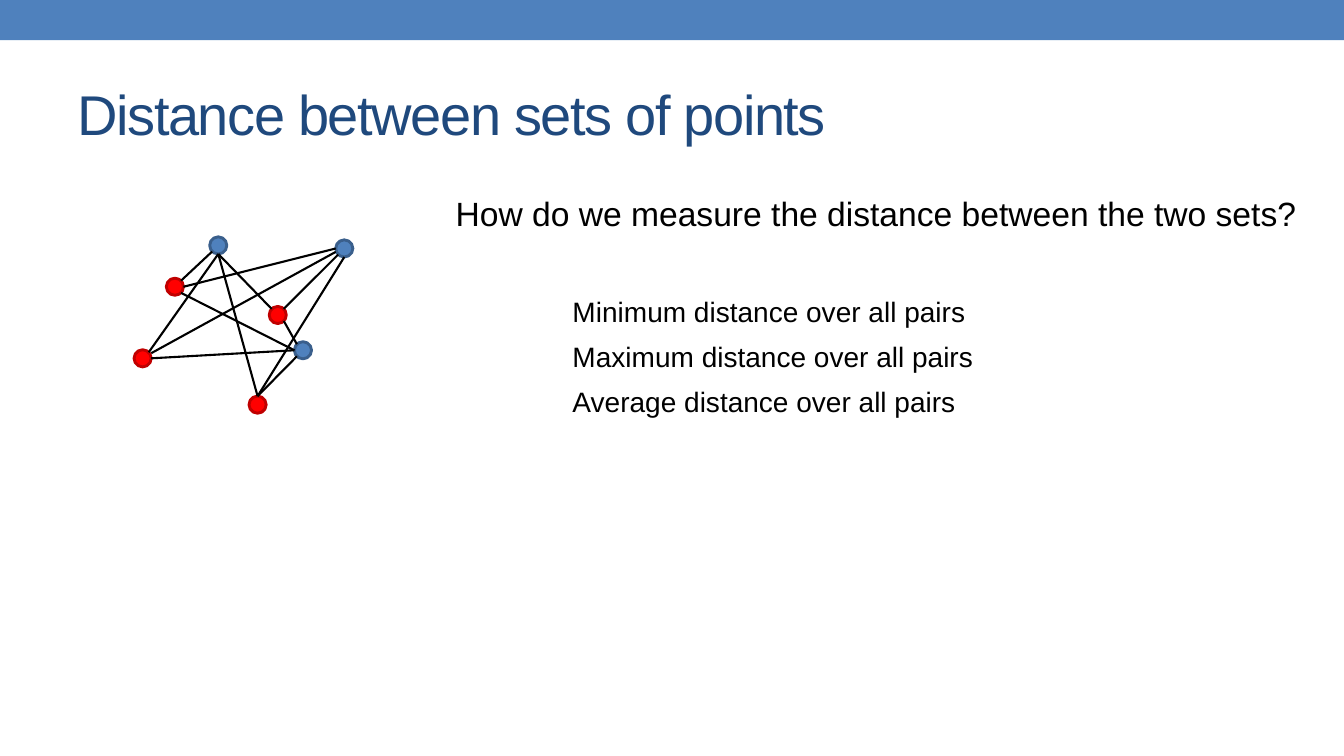
from lxml import etree
from pptx import Presentation
from pptx.dml.color import RGBColor
from pptx.enum.shapes import MSO_CONNECTOR, MSO_SHAPE
from pptx.enum.text import MSO_ANCHOR
from pptx.oxml.ns import qn
from pptx.util import Inches, Pt

RECTANGLE, OVAL = MSO_SHAPE.RECTANGLE, MSO_SHAPE.OVAL
STRAIGHT = MSO_CONNECTOR.STRAIGHT
MIDDLE, TOP = MSO_ANCHOR.MIDDLE, MSO_ANCHOR.TOP

COLOURS = {
    "blue": "4F81BD", "blue edge": "3A5F8C",
    "red": "FF0000", "red edge": "C00000",
    "title": "1F497D", "black": "000000",
}
FONT = "Arial"
WIDTH, HEIGHT = 13.33, 7.5

TITLE = "Distance between sets of points"
QUESTION = "How do we measure the distance between the two sets?"
MEASURES = [
    "Minimum distance over all pairs",
    "Maximum distance over all pairs",
    "Average distance over all pairs",
]
MEASURE_TOP, MEASURE_PITCH = 2.87, 0.45

# Centres of the points in the two sets
RADIUS = 0.085
POINTS = {
    "blue left": (2.165, 2.435),
    "blue right": (3.415, 2.465),
    "blue low": (3.005, 3.475),
    "red upper": (1.735, 2.845),
    "red far": (1.415, 3.555),
    "red low": (2.555, 4.015),
    "red inner": (2.755, 3.125),
}
# Places on a point's rim, in radii from its centre
DIAGONAL = 0.71
RIM = {
    "N": (0, -1), "S": (0, 1), "W": (-1, 0), "E": (1, 0),
    "NW": (-DIAGONAL, -DIAGONAL), "NE": (DIAGONAL, -DIAGONAL),
    "SW": (-DIAGONAL, DIAGONAL), "SE": (DIAGONAL, DIAGONAL),
    "ENE": (1, -0.6), "WSW": (-1, 0.4),
}
PAIRS = [
    ("red far", "ENE", "blue right", "WSW"),
    ("red upper", "E", "blue right", "W"),
    ("red inner", "NE", "blue right", "SW"),
    ("red low", "N", "blue right", "S"),
    ("red far", "E", "blue low", "W"),
    ("red upper", "SE", "blue low", "W"),
    ("red upper", "NE", "blue left", "SW"),
    ("red far", "NE", "blue left", "S"),
    ("red low", "N", "blue left", "S"),
    ("red low", "N", "blue low", "SW"),
    ("red inner", "NW", "blue left", "S"),
    ("blue low", "NW", "red inner", "SE"),
]


def colour(name):
    return RGBColor.from_string(COLOURS[name])


def add_filled(page, kind, area, fill):
    shape = page.shapes.add_shape(kind, *map(Inches, area))
    shape.shadow.inherit = False
    shape.fill.solid()
    shape.fill.fore_color.rgb = colour(fill)
    shape.line.fill.background()
    return shape


def add_text(page, area, text, size, ink="black", anchor=TOP, spacing=0):
    """Add one line of text; spacing is in hundredths of a point."""
    box = page.shapes.add_textbox(*map(Inches, area))
    frame = box.text_frame
    frame.word_wrap = True
    frame.vertical_anchor = anchor
    span = frame.paragraphs[0].add_run()
    span.text = text
    span.font.name = FONT
    span.font.size = Pt(size)
    span.font.color.rgb = colour(ink)
    if spacing:
        span.font._element.set("spc", str(spacing))


def add_point(page, name):
    x, y = POINTS[name]
    family = name.split()[0]
    area = (x - RADIUS, y - RADIUS, 2 * RADIUS, 2 * RADIUS)
    point = add_filled(page, OVAL, area, family)
    point.line.color.rgb = colour(family + " edge")
    point.line.width = Pt(2.08)


def rim_position(name, side):
    return [Inches(centre + RADIUS * offset)
            for centre, offset in zip(POINTS[name], RIM[side])]


def add_pair(page, start, start_side, end, end_side):
    line = page.shapes.add_connector(
        STRAIGHT, *rim_position(start, start_side), *rim_position(end, end_side))
    line.line.color.rgb = colour("black")
    line.line.width = Pt(1.5)
    etree.SubElement(line._element.spPr, qn("a:effectLst"))


def main():
    deck = Presentation()
    deck.slide_width, deck.slide_height = Inches(WIDTH), Inches(HEIGHT)
    page = deck.slides.add_slide(deck.slide_layouts[6])

    add_filled(page, RECTANGLE, (0, 0, WIDTH, 0.4), "blue")
    add_text(page, (0.67, 0.58, 12, 1.08), TITLE, 40, "title", MIDDLE, -100)
    add_text(page, (4.42, 1.86, 8.67, 0.5), QUESTION, 24)
    for row, measure in enumerate(MEASURES):
        top = MEASURE_TOP + row * MEASURE_PITCH
        add_text(page, (5.58, top, 5.43, 0.44), measure, 20)

    for name in POINTS:
        add_point(page, name)
    for pair in PAIRS:
        add_pair(page, *pair)

    deck.save("out.pptx")


if __name__ == "__main__":
    main()
